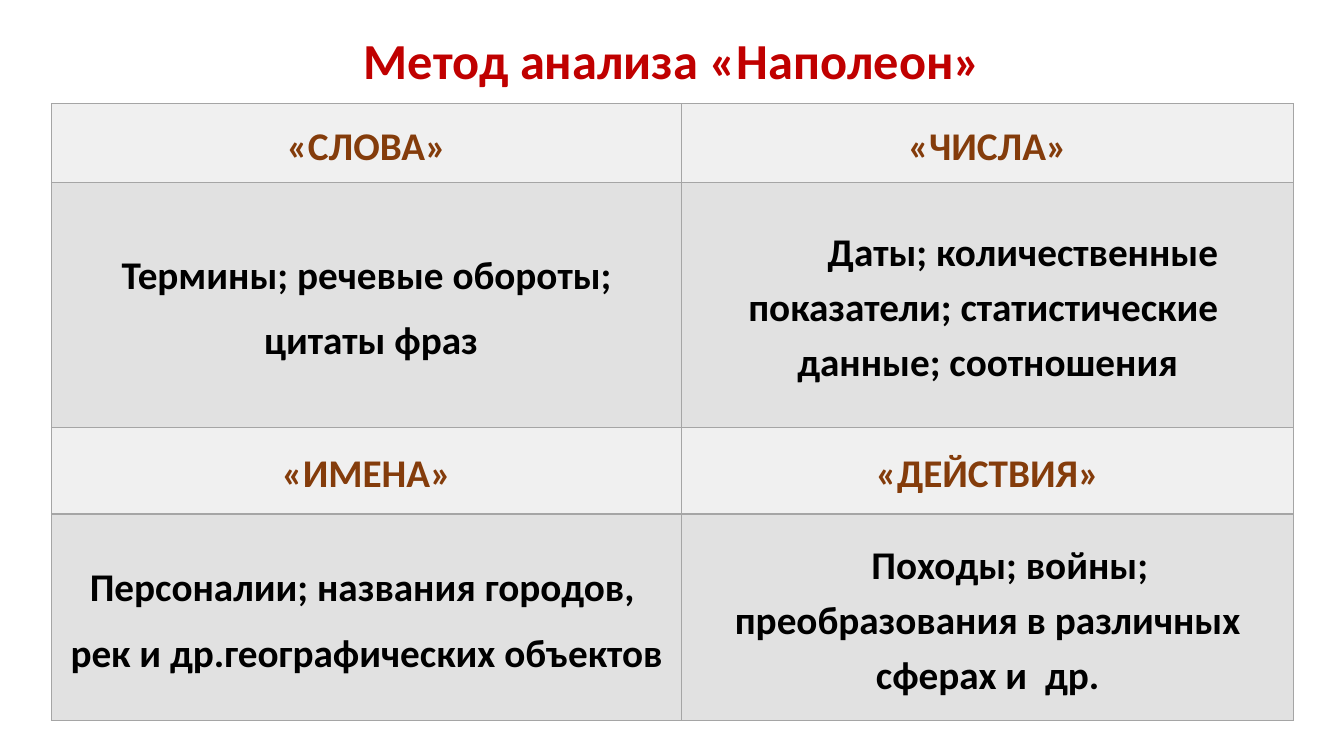
"""Builds the slide on the «Наполеон» method of analysis."""
from dataclasses import dataclass

from lxml.etree import SubElement
from pptx import Presentation
from pptx.dml.color import RGBColor
from pptx.enum.text import MSO_ANCHOR, PP_ALIGN
from pptx.oxml.ns import qn
from pptx.util import Inches, Pt


@dataclass(frozen=True)
class Theme:
    font: str = "Calibri"
    title_size: int = 36
    cell_size: int = 28
    title: str = "C00000"
    heading: str = "843C0B"
    body: str = "000000"
    heading_fill: str = "F0F0F0"
    body_fill: str = "E1E1E1"
    border: str = "A5A5A5"


class SlideBuilder:
    def __init__(self, theme):
        self.theme = theme
        self.deck = Presentation()
        self.deck.slide_width = Inches(13.33)
        self.deck.slide_height = Inches(7.5)
        self.slide = self.deck.slides.add_slide(self.deck.slide_layouts[5])

    def style(self, paragraph, size, color, spacing):
        paragraph.alignment = PP_ALIGN.CENTER
        paragraph.line_spacing = spacing
        paragraph.font.name = self.theme.font
        paragraph.font.size = Pt(size)
        paragraph.font.bold = True
        paragraph.font.color.rgb = RGBColor.from_string(color)

    def title(self, text, left, top, width, height):
        heading = self.slide.shapes.title
        heading.left, heading.top = Inches(left), Inches(top)
        heading.width, heading.height = Inches(width), Inches(height)
        heading.text_frame.text = text
        heading.text_frame.vertical_anchor = MSO_ANCHOR.MIDDLE
        self.style(heading.text_frame.paragraphs[0], self.theme.title_size, self.theme.title, 0.9)

    def borders(self, cell):
        properties = cell._tc.get_or_add_tcPr()
        for position, side in enumerate(("lnL", "lnR", "lnT", "lnB")):
            line = SubElement(properties, qn(f"a:{side}"), w=str(Pt(1)))
            fill = SubElement(line, qn("a:solidFill"))
            SubElement(fill, qn("a:srgbClr"), val=self.theme.border)
            properties.insert(position, line)

    def cell(self, cell, lines, indents, is_heading):
        theme = self.theme
        cell.margin_left = cell.margin_right = cell.margin_top = cell.margin_bottom = 0
        cell.vertical_anchor = MSO_ANCHOR.MIDDLE
        cell.fill.solid()
        cell.fill.fore_color.rgb = RGBColor.from_string(
            theme.heading_fill if is_heading else theme.body_fill)
        cell.text_frame.text = "\n".join(lines)
        color = theme.heading if is_heading else theme.body
        for paragraph, indent in zip(cell.text_frame.paragraphs, indents):
            self.style(paragraph, theme.cell_size, color, 1.15)
            paragraph.space_after = Pt(7.5)
            properties = paragraph._p.get_or_add_pPr()
            properties.set("marL", "0")
            properties.set("indent", str(Inches(indent)))
        self.borders(cell)

    def table(self, rows, left, top, widths, heights):
        grid = self.slide.shapes.add_table(
            len(heights), len(widths), Inches(left), Inches(top),
            Inches(sum(widths)), Inches(sum(heights))).table
        for column, width in zip(grid.columns, widths):
            column.width = Inches(width)
        for row, height in zip(grid.rows, heights):
            row.height = Inches(height)
        for r, row in enumerate(rows):
            for c, (lines, indents) in enumerate(row):
                self.cell(grid.cell(r, c), lines, indents, r % 2 == 0)

    def save(self):
        self.deck.save("out.pptx")


def main():
    method_rows = [
        [(["«СЛОВА»"], [0]), (["«ЧИСЛА»"], [0])],
        [(["Термины; речевые обороты;", "цитаты фраз"], [0, 0.09]),
         (["Даты; количественные показатели; статистические  данные; соотношения"], [0.7])],
        [(["«ИМЕНА»"], [0]), (["«ДЕЙСТВИЯ»"], [0])],
        [(["Персоналии; названия городов, ", "рек и др.географических объектов"], [0, 0]),
         (["Походы; войны; преобразования в различных сферах и  др."], [0.44])],
    ]
    builder = SlideBuilder(Theme())
    builder.title("Метод анализа «Наполеон»", 0.92, 0.12, 11.5, 1.01)
    builder.table(method_rows, 0.51, 1.03, [6.25, 6.07], [0.78, 2.43, 0.86, 2.05])
    builder.save()


if __name__ == "__main__":
    main()
